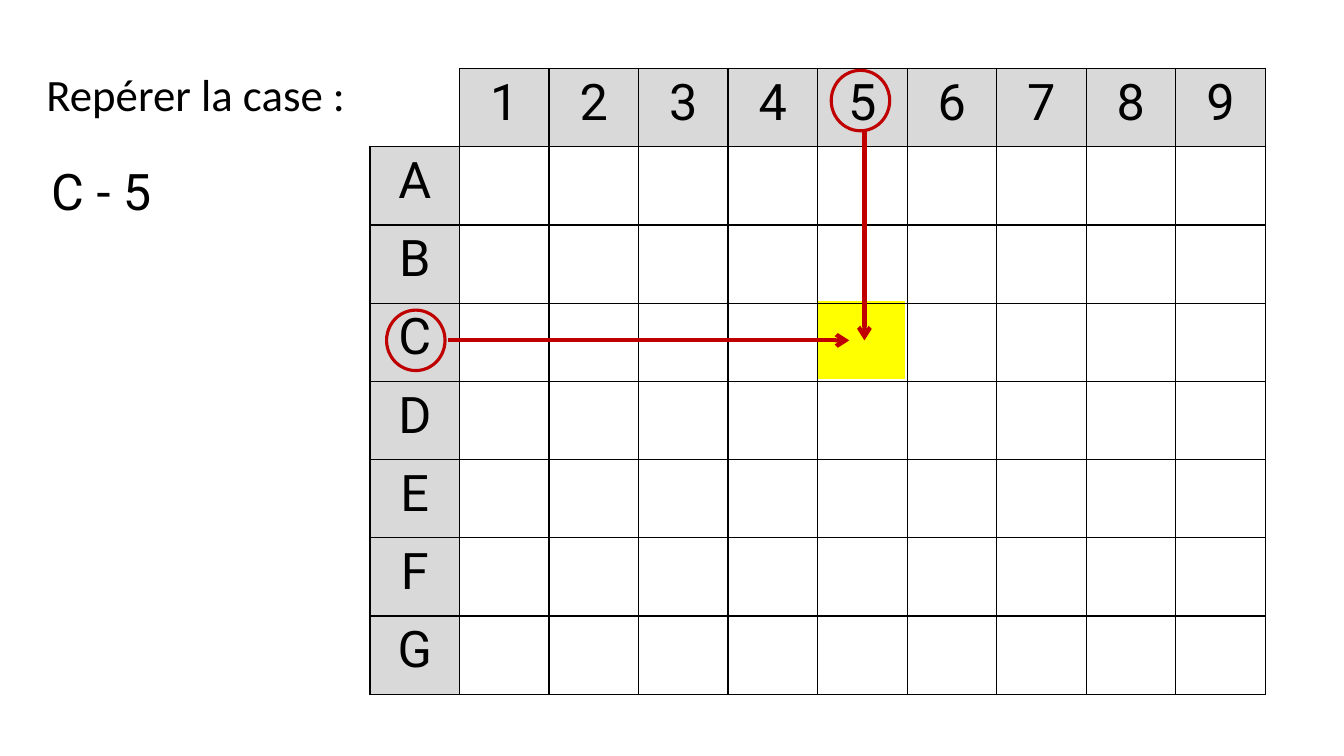
"""Build a slide that shows how to locate a square on a lettered and numbered grid."""
from dataclasses import dataclass

from lxml.etree import SubElement
from pptx import Presentation
from pptx.dml.color import RGBColor as RGB
from pptx.enum.shapes import MSO_CONNECTOR as CONN, MSO_SHAPE as SHAPE
from pptx.enum.text import MSO_ANCHOR as ANCHOR, MSO_AUTO_SIZE as FIT, PP_ALIGN as ALIGN
from pptx.oxml.ns import qn
from pptx.util import Inches, Pt

TITLE = "Repérer la case :"
COLUMNS = "123456789"
ROWS = "ABCDEFG"
TARGET = ("C", "5")


@dataclass(frozen=True)
class Theme:
    ink: RGB = RGB(0, 0, 0)
    header: RGB = RGB(0xD9, 0xD9, 0xD9)
    target: RGB = RGB(0xFF, 0xFF, 0)
    mark: RGB = RGB(0xC0, 0, 0)
    title_font: str = "Calibri"
    grid_font: str = "Roboto"
    title_size: int = 32
    grid_size: int = 36


T = Theme()
LEFT, TOP, WIDTH, HEIGHT = 3.67, 0.68, 8.88, 6.21
COL_W, ROW_H = WIDTH / (len(COLUMNS) + 1), HEIGHT / (len(ROWS) + 1)
RING_W, RING_H = 0.58, 0.6


def write(tf, text, font, size, align=ALIGN.LEFT):
    p = tf.paragraphs[0]
    p.text, p.alignment = text, align
    p.font.name, p.font.size, p.font.color.rgb = font, Pt(size), T.ink


def shape(s, kind, box, fill, line, width):
    sp = s.shapes.add_shape(kind, *map(Inches, box))
    sp.shadow.inherit = False
    if fill is None:
        sp.fill.background()
    else:
        sp.fill.solid()
        sp.fill.fore_color.rgb = fill
    sp.line.color.rgb, sp.line.width = line, Pt(width)


def ring(s, x, y):
    box = (x - RING_W / 2, y - RING_H / 2, RING_W, RING_H)
    shape(s, SHAPE.OVAL, box, None, T.mark, 2.25)


def arrow(s, *ends):
    c = s.shapes.add_connector(CONN.STRAIGHT, *map(Inches, ends))
    c.line.color.rgb, c.line.width = T.mark, Pt(3)
    SubElement(c.line._get_or_add_ln(), qn("a:tailEnd"), type="arrow")
    SubElement(c._element.spPr, qn("a:effectLst"))


def borders(cell, sides):
    tc_pr = cell._tc.get_or_add_tcPr()
    for side in "LRTB":
        ln = SubElement(tc_pr, qn(f"a:ln{side}"), w=str(Pt(1)))
        if side in sides:
            fill = SubElement(ln, qn("a:solidFill"))
            SubElement(fill, qn("a:srgbClr"), val=str(T.ink))
        else:
            SubElement(ln, qn("a:noFill"))


def grid(s):
    box = map(Inches, (LEFT, TOP, WIDTH, HEIGHT))
    table = s.shapes.add_table(len(ROWS) + 1, len(COLUMNS) + 1, *box).table
    table.first_row = table.horz_banding = False
    for col in table.columns:
        col.width = Inches(COL_W)
    for row in table.rows:
        row.height = Inches(ROW_H)
    for r, letter in enumerate(" " + ROWS):
        for c, number in enumerate(" " + COLUMNS):
            cell = table.cell(r, c)
            borders(cell, "LRTB" if r or c else "RB")
            if (r == 0) != (c == 0):
                cell.fill.solid()
                cell.fill.fore_color.rgb = T.header
                label = letter if c == 0 else number
                write(cell.text_frame, label, T.grid_font, T.grid_size, ALIGN.CENTER)
            else:
                cell.fill.background()


def heading(sp, box, text, font, size):
    sp.left, sp.top, sp.width, sp.height = map(Inches, box)
    tf = sp.text_frame
    tf.word_wrap, tf.auto_size = True, FIT.SHAPE_TO_FIT_TEXT
    tf.vertical_anchor = ANCHOR.TOP
    write(tf, text, font, size)


def main():
    prs = Presentation()
    prs.slide_width, prs.slide_height = Inches(13.33), Inches(7.5)
    s = prs.slides.add_slide(prs.slide_layouts[5])
    letter, number = TARGET
    row, col = ROWS.index(letter) + 1, COLUMNS.index(number) + 1
    x, y = LEFT + (col + 0.5) * COL_W - 0.02, TOP + (row + 0.5) * ROW_H - 0.02
    row_x, col_y = LEFT + COL_W / 2 + 0.01, TOP + ROW_H / 2 - 0.07

    shape(s, SHAPE.RECTANGLE, (x - 0.42, y - 0.38, 0.86, 0.76), T.target, T.target, 1)
    grid(s)
    heading(s.shapes.title, (0.36, 0.61, 3.58, 0.64), TITLE, T.title_font, T.title_size)
    answer = s.shapes.add_textbox(0, 0, 0, 0)
    heading(answer, (0.41, 1.54, 2.71, 0.71), " - ".join(TARGET), T.grid_font, T.grid_size)
    ring(s, row_x, y)
    ring(s, x, col_y)
    arrow(s, row_x + 0.32, y, x - 0.11, y)
    arrow(s, x + 0.04, col_y + RING_H / 2, x + 0.04, y)
    prs.save("out.pptx")


if __name__ == "__main__":
    main()
